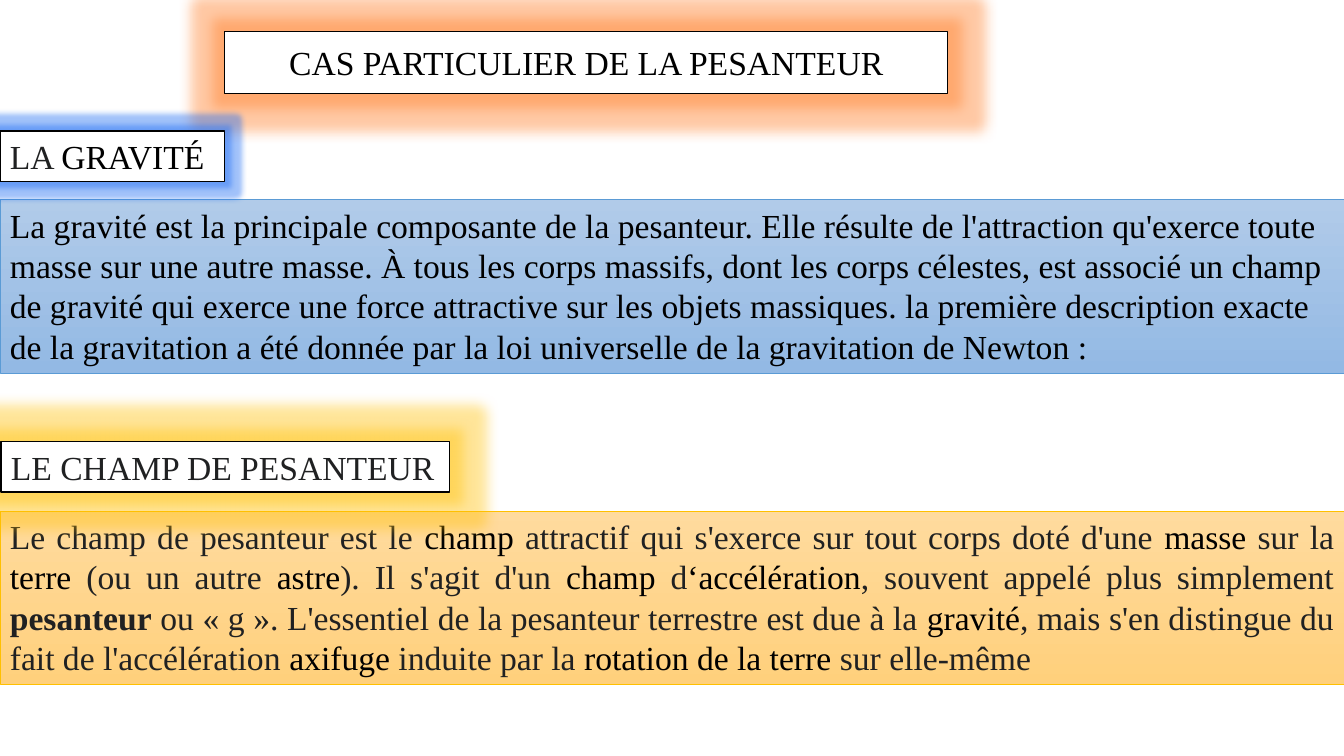
from lxml import etree
from pptx import Presentation
from pptx.dml.color import RGBColor
from pptx.enum.shapes import MSO_SHAPE
from pptx.enum.text import MSO_ANCHOR, PP_ALIGN
from pptx.oxml.ns import qn
from pptx.util import Inches, Pt

RECT = MSO_SHAPE.RECTANGLE
TOP, MIDDLE = MSO_ANCHOR.TOP, MSO_ANCHOR.MIDDLE
LEFT, CENTER, JUSTIFY = PP_ALIGN.LEFT, PP_ALIGN.CENTER, PP_ALIGN.JUSTIFY
BLACK, GREY, WHITE = "000000", "202122", "FFFFFF"
WIDTH = 13.33

GRAVITY = (
    "La gravité est la principale composante de la pesanteur. Elle résulte de "
    "l'attraction qu'exerce toute masse sur une autre masse. À tous les corps "
    "massifs, dont les corps célestes, est associé un champ de gravité qui exerce "
    "une force attractive sur les objets massiques. la première description exacte "
    "de la gravitation a été donnée par la loi universelle de la gravitation de "
    "Newton :"
)
FIELD = [
    ("Le champ de pesanteur est le ", GREY),
    ("champ", BLACK),
    (" attractif qui s'exerce sur tout corps doté d'une ", GREY),
    ("masse", BLACK),
    (" sur la ", GREY),
    ("terre", BLACK),
    (" (ou un autre ", GREY),
    ("astre", BLACK),
    ("). Il s'agit d'un ", GREY),
    ("champ", BLACK),
    (" d", GREY),
    ("‘accélération", BLACK),
    (", souvent appelé plus simplement ", GREY),
    ("pesanteur", GREY, True),
    (" ou « g ». L'essentiel de la pesanteur terrestre est due à la ", GREY),
    ("gravité", BLACK),
    (", mais s'en distingue du fait de l'accélération ", GREY),
    ("axifuge", BLACK),
    (" induite par la ", GREY),
    ("rotation de la terre", BLACK),
    (" sur elle-même", GREY),
]


def paint(color, value):
    """Set a colour from a hex string."""
    color.rgb = RGBColor.from_string(value)


def add_box(slide, place, line, weight):
    """Add an outlined rectangle without a shadow."""
    box = slide.shapes.add_shape(RECT, *(Inches(n) for n in place))
    box.shadow.inherit = False
    paint(box.line.color, line)
    box.line.width = Pt(weight)
    return box


def add_text(box, runs, align, anchor, wrap):
    """Fill a box with one paragraph of coloured runs."""
    frame = box.text_frame
    frame.word_wrap = wrap
    frame.vertical_anchor = anchor
    para = frame.paragraphs[0]
    para.alignment = align
    para.font.name = "Times New Roman"
    para.font.size = Pt(24)
    for text, color, *bold in runs:
        run = para.add_run()
        run.text = text
        paint(run.font.color, color)
        if bold:
            run.font.bold = True


def add_glow(box, color, radius):
    """Put a translucent glow around a box."""
    effects = box._element.spPr.find(qn("a:effectLst"))
    glow = etree.SubElement(effects, qn("a:glow"), rad=str(Pt(radius)))
    tint = etree.SubElement(glow, qn("a:srgbClr"), val=color)
    etree.SubElement(tint, qn("a:alpha"), val="40000")


def add_title(slide, place, runs, glow, radius, align=LEFT, anchor=TOP, wrap=False):
    """Add a white heading box with a glow."""
    box = add_box(slide, place, BLACK, 1)
    box.fill.solid()
    paint(box.fill.fore_color, WHITE)
    add_glow(box, glow, radius)
    add_text(box, runs, align, anchor, wrap)


def add_panel(slide, top, runs, line, shades, align):
    """Add a full-width panel shaded from top to bottom."""
    box = add_box(slide, (0, top, WIDTH, 1.72), line, 0.5)
    box.fill.gradient()
    box.fill.gradient_angle = 270
    for stop, place, shade in zip(box.fill.gradient_stops, (0, 1), shades):
        stop.position = place
        paint(stop.color, shade)
    add_text(box, runs, align, TOP, True)


def main():
    """Build the slide and save it."""
    deck = Presentation()
    deck.slide_width, deck.slide_height = Inches(WIDTH), Inches(7.5)
    slide = deck.slides.add_slide(deck.slide_layouts[6])
    add_title(slide, (2.23, 0.31, 7.17, 0.62),
              [("CAS PARTICULIER DE LA PESANTEUR", BLACK)],
              "FF791F", 18, CENTER, MIDDLE, True)
    add_panel(slide, 1.98, [(GRAVITY, BLACK)], "5B9BD5", ("B1CBE9", "93B9E4"), LEFT)
    add_title(slide, (0, 1.3, 2.23, 0.5),
              [("LA ", GREY), ("GRAVITÉ", BLACK)], "1466F4", 8)
    add_panel(slide, 5.07, FIELD, "FFC000", ("FFDB9E", "FFD07C"), JUSTIFY)
    add_title(slide, (0.01, 4.38, 4.45, 0.5),
              [("LE CHAMP DE PESANTEUR", GREY)], "FFC000", 18)
    deck.save("out.pptx")


if __name__ == "__main__":
    main()
